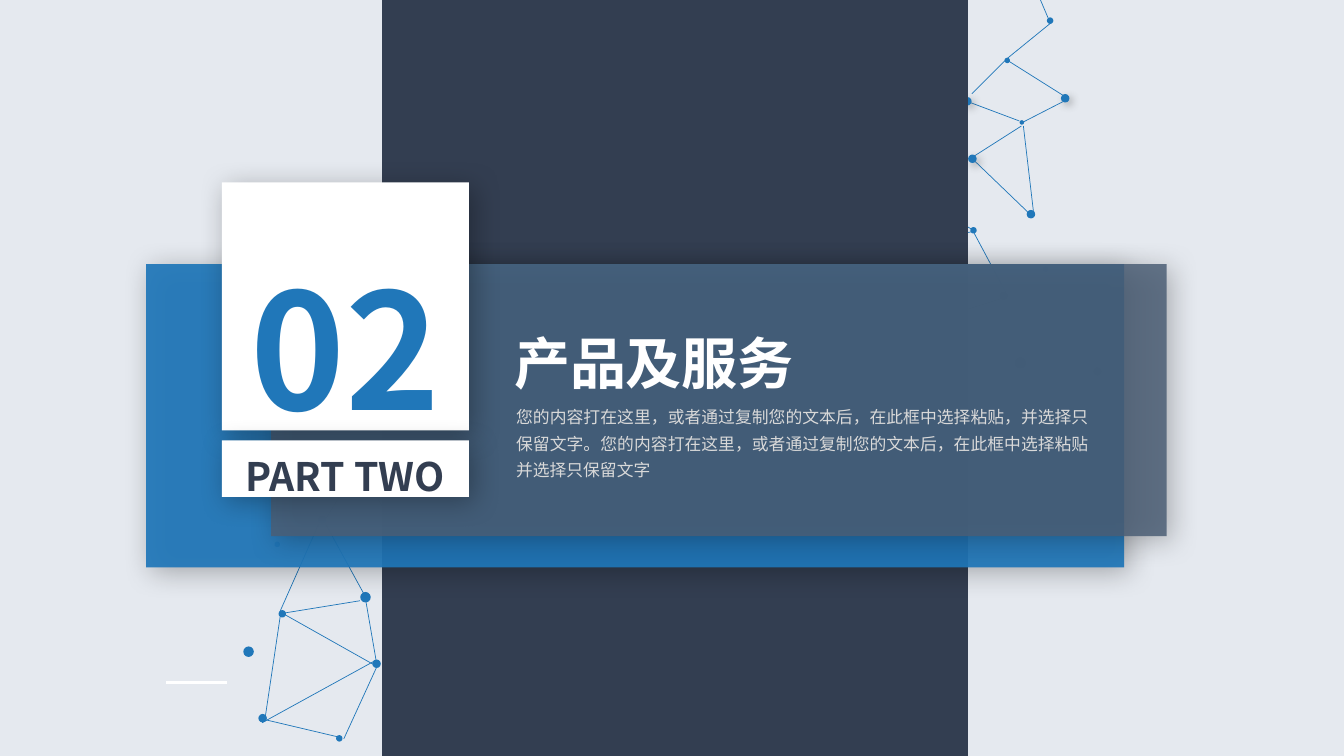
from lxml import etree
from pptx import Presentation
from pptx.dml.color import RGBColor
from pptx.enum.shapes import MSO_CONNECTOR, MSO_SHAPE
from pptx.enum.text import MSO_ANCHOR, MSO_AUTO_SIZE, PP_ALIGN
from pptx.oxml.ns import qn
from pptx.util import Inches, Pt

STRAIGHT = MSO_CONNECTOR.STRAIGHT
RECTANGLE, OVAL = MSO_SHAPE.RECTANGLE, MSO_SHAPE.OVAL
LEFT, CENTER, JUSTIFY = PP_ALIGN.LEFT, PP_ALIGN.CENTER, PP_ALIGN.JUSTIFY
MIDDLE = MSO_ANCHOR.MIDDLE
FIT_SHAPE = MSO_AUTO_SIZE.SHAPE_TO_FIT_TEXT

COLORS = {
    "background": "E5E9EF", "navy": "333E51", "blue": "2077B9", "slate": "4B5E75",
    "white": "FFFFFF", "body": "D9D9D9", "black": "000000", "gray": "404040",
}
CJK_FONT = "Noto Sans CJK SC"
BODY_FONT = "Arial Narrow"

# Shadows: color, opacity %, blur pt, distance pt
PANEL_SHADOW = ("black", 30, 20, 5)
DOT_SHADOW = ("gray", 40, 6, 3)

# Networks are relative to their box: lines are x1, y1, x2, y2; dots are left, top, diameter
UPPER_BOX = (8.5, 0)
UPPER_LINES = [
    (1.51, 0.61, 2.05, 0.95), (1.82, 0, 1.9, 0.19), (1.92, 0.23, 1.49, 0.58),
    (1.47, 0.6, 1.14, 0.93), (1.13, 1.02, 1.61, 1.2), (1.16, 1.55, 1.63, 1.25),
    (1.75, 2.1, 1.65, 1.25), (1.17, 1.6, 1.7, 2.11), (1.65, 1.21, 2.04, 1.01),
    (0.58, 1.95, 1.13, 2.27), (1.16, 2.31, 1.48, 2.91), (1.14, 2.3, 0.07, 2.46),
    (1.44, 2.96, 0.68, 3.2),
]
UPPER_DOTS = [
    (1.89, 0.18, 0.05), (1.69, 2.09, 0.07), (1.47, 0.58, 0.04), (1.62, 1.2, 0.03),
    (1.13, 2.26, 0.05), (1.42, 2.9, 0.07), (1.57, 3.55, 0.1), (2.35, 3.65, 0.07),
    (1.85, 2.65, 0.04),
]
UPPER_SHADED_DOTS = [(1.06, 0.97, 0.07), (1.11, 1.54, 0.07), (2.03, 0.94, 0.07)]

LOWER_BOX = (2.4, 4.6)
LOWER_LINES = [
    (1.23, 1.37, 1.33, 1.95), (1.01, 2.73, 1.34, 2.01), (0.23, 2.52, 0.38, 1.51),
    (0.2, 2.57, 1.31, 1.96), (1.3, 1.99, 0.43, 1.5), (0.95, 2.71, 0.23, 2.54),
    (0.43, 1.48, 1.17, 1.36), (0.82, 0.58, 1.23, 1.33), (0.77, 0.58, 0.38, 1.46),
    (1.13, 0.06, 0.83, 0.55), (1.18, 0.07, 1.51, 0.62),
]
LOWER_DOTS = [
    (1.3, 1.95, 0.07), (0.94, 2.7, 0.05), (0.37, 1.46, 0.06), (0.76, 0.52, 0.07),
    (0.17, 2.49, 0.07), (1.18, 1.28, 0.09), (0.02, 1.82, 0.09), (0.33, 0.78, 0.04),
]

BODY_TEXT = ("您的内容打在这里，或者通过复制您的文本后，在此框中选择粘贴，并选择只保留文字。"
             "您的内容打在这里，或者通过复制您的文本后，在此框中选择粘贴并选择只保留文字")


def color(name):
    return RGBColor.from_string(COLORS[name])


def add_shadow(shape, name, opacity, blur, distance):
    """Cast an outer shadow to the lower right."""
    effects = shape._element.spPr.find(qn("a:effectLst"))
    shadow = etree.SubElement(effects, qn("a:outerShdw"), blurRad=str(Pt(blur)),
                              dist=str(Pt(distance)), dir="2700000",
                              algn="tl", rotWithShape="0")
    tint = etree.SubElement(shadow, qn("a:srgbClr"), val=COLORS[name])
    etree.SubElement(tint, qn("a:alpha"), val=str(opacity * 1000))


def add_filled(slide, kind, box, fill, opacity=100, shadow=None, outline=None):
    shape = slide.shapes.add_shape(kind, *map(Inches, box))
    shape.shadow.inherit = False
    shape.fill.solid()
    shape.fill.fore_color.rgb = color(fill)
    if opacity < 100:
        tint = shape._element.spPr.find(qn("a:solidFill"))[0]
        etree.SubElement(tint, qn("a:alpha"), val=str(opacity * 1000))
    if outline:
        shape.line.color.rgb = color(fill)
        shape.line.width = Pt(outline)
    else:
        shape.line.fill.background()
    if shadow:
        add_shadow(shape, *shadow)
    return shape


def add_line(slide, ends, name, width):
    line = slide.shapes.add_connector(STRAIGHT, *map(Inches, ends))
    line.line.color.rgb = color(name)
    line.line.width = Pt(width)
    etree.SubElement(line._element.spPr, qn("a:effectLst"))


def write(shape, text, size, name, align=LEFT, bold=True, font=CJK_FONT):
    shape.text_frame.word_wrap = True
    paragraph = shape.text_frame.paragraphs[0]
    for key, value in {"alignment": align, "line_spacing": 1.3}.items():
        setattr(paragraph, key, value)
    run = paragraph.add_run()
    run.text = text
    for key, value in {"size": Pt(size), "bold": bold, "name": font}.items():
        setattr(run.font, key, value)
    run.font.color.rgb = color(name)
    etree.SubElement(run._r.get_or_add_rPr(), qn("a:ea"), typeface=CJK_FONT)


def add_text(slide, box, *content, **style):
    shape = slide.shapes.add_textbox(*map(Inches, box))
    write(shape, *content, **style)
    shape.text_frame.auto_size = FIT_SHAPE


def add_network(slide, box, lines, dots, shaded_dots=()):
    x, y = box
    for x1, y1, x2, y2 in lines:
        add_line(slide, (x + x1, y + y1, x + x2, y + y2), "blue", 0.5)
    for group, shadow in ((dots, None), (shaded_dots, DOT_SHADOW)):
        for left, top, size in group:
            add_filled(slide, OVAL, (x + left, y + top, size, size), "blue",
                       shadow=shadow, outline=1)


def add_panels(slide, box):
    """Two overlapping translucent panels with a short white rule below."""
    x, y = box
    add_filled(slide, RECTANGLE, (x, y, 9.7, 3.01), "blue", 93, PANEL_SHADOW)
    add_line(slide, (x + 0.2, y + 4.15, x + 0.8, y + 4.15), "white", 2.25)
    add_filled(slide, RECTANGLE, (x + 1.24, y, 8.88, 2.7), "slate", 84, PANEL_SHADOW)


def add_number_card(slide, box):
    x, y, width = box
    add_filled(slide, RECTANGLE, (x, y, width, 2.46), "white", shadow=PANEL_SHADOW)
    add_text(slide, (x - 0.25, y + 0.04, width + 0.5, 2.59), "02", 115, "blue",
             align=CENTER)
    label = add_filled(slide, RECTANGLE, (x, y + 2.56, width, 0.56), "white",
                       shadow=PANEL_SHADOW)
    label.text_frame.vertical_anchor = MIDDLE
    write(label, "PART TWO", 28, "navy", align=CENTER)


def add_section_text(slide, box):
    x, y = box
    add_text(slide, (x, y, 4.65, 0.97), "产品及服务", 40, "white")
    add_text(slide, (x + 0.02, y + 0.92, 5.88, 0.88), BODY_TEXT, 12, "body",
             align=JUSTIFY, bold=False, font=BODY_FONT)


def main():
    presentation = Presentation()
    presentation.slide_width = Inches(13.33)
    presentation.slide_height = Inches(7.5)
    slide = presentation.slides.add_slide(presentation.slide_layouts[6])
    slide.background.fill.solid()
    slide.background.fill.fore_color.rgb = color("background")
    add_network(slide, UPPER_BOX, UPPER_LINES, UPPER_DOTS, UPPER_SHADED_DOTS)
    add_network(slide, LOWER_BOX, LOWER_LINES, LOWER_DOTS)
    add_filled(slide, RECTANGLE, (3.79, 0, 5.81, 7.5), "navy")
    add_panels(slide, (1.45, 2.62))
    add_number_card(slide, (2.2, 1.81, 2.45))
    add_section_text(slide, (5, 3.01))
    presentation.save("out.pptx")


if __name__ == "__main__":
    main()
